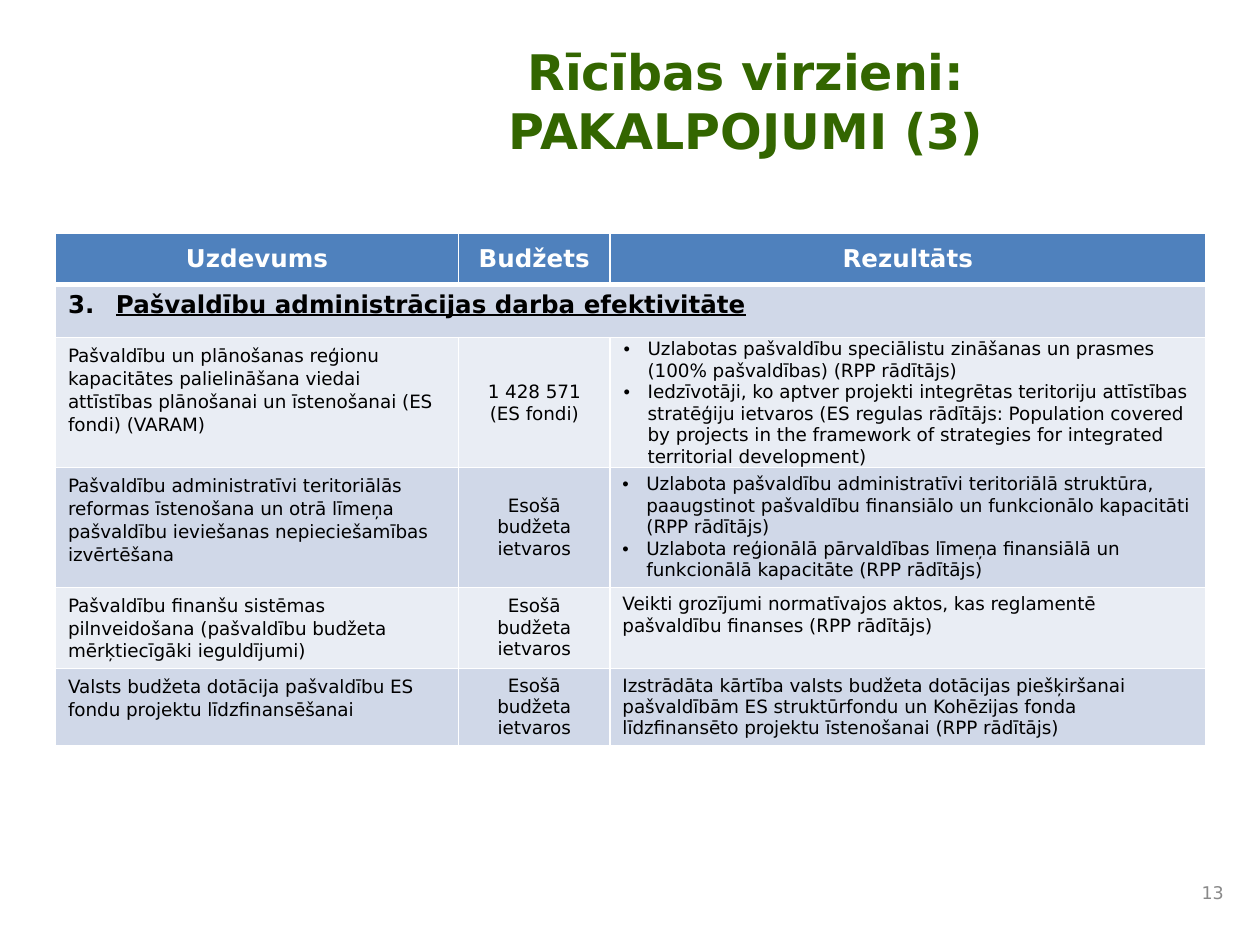
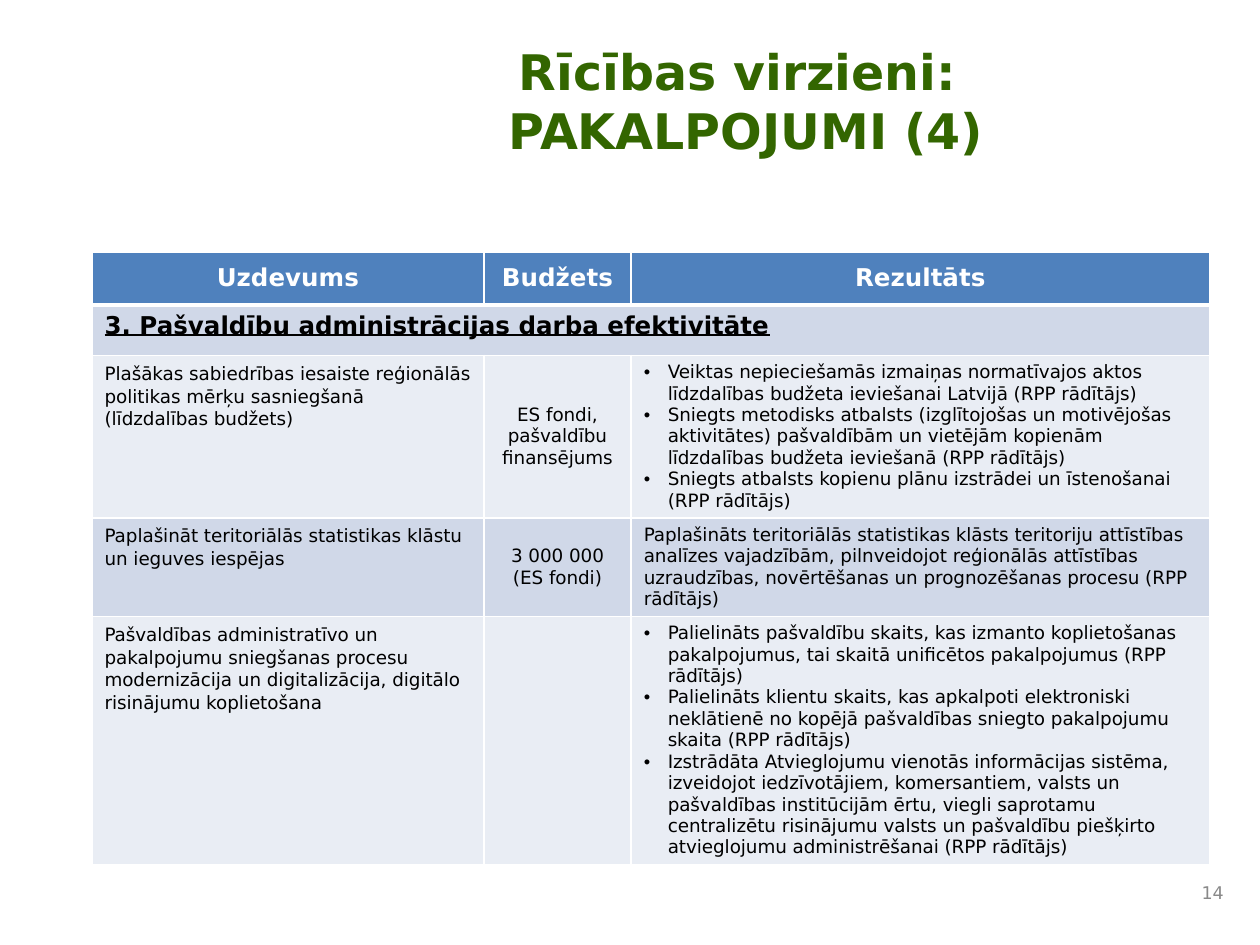
from dataclasses import dataclass
from enum import Enum

from lxml.etree import SubElement
from pptx import Presentation
from pptx.dml.color import RGBColor
from pptx.enum.text import MSO_ANCHOR, MSO_AUTO_SIZE, PP_ALIGN
from pptx.oxml.ns import qn
from pptx.util import Emu, Inches, Pt

FONT = "DejaVu Sans"
GREEN = RGBColor(0x33, 0x66, 0x00)
BLUE = RGBColor(0x4F, 0x81, 0xBD)
BAND_DARK = RGBColor(0xD0, 0xD8, 0xE8)
BAND_LIGHT = RGBColor(0xE9, 0xED, 0xF4)
WHITE = RGBColor(0xFF, 0xFF, 0xFF)
BLACK = RGBColor(0x00, 0x00, 0x00)
GREY = RGBColor(0x89, 0x89, 0x89)

GRID_UNIT = Inches(0.1)
TITLE_BOX = (24.1, 2, 70.2, 12)
NUMBER_BOX = (93.3, 69.2, 4.8, 3.3)
HEADINGS = ("Uzdevums", "Budžets", "Rezultāts")
SECTION = "Pašvaldību administrācijas darba efektivitāte"
OWN_BUDGET = ("Esošā budžeta ietvaros",)
HANG = 1.9


class Bullet(Enum):
    NONE = 0
    DOT = 1
    NUMBER = 2


@dataclass(frozen=True)
class TextStyle:
    size: float
    color: RGBColor
    bold: bool = False
    underline: bool = False
    align: PP_ALIGN = PP_ALIGN.LEFT
    spacing: float = 1.0


@dataclass(frozen=True)
class Task:
    name: str
    budget: tuple[str, ...]
    results: tuple[str, ...]
    height: float
    tight: bool = False


@dataclass(frozen=True)
class TaskSlide:
    number: int
    title: tuple[str, str]
    section: str
    numbered: bool
    left: float
    top: float
    columns: tuple[float, float, float]
    head_rows: tuple[float, float]
    tasks: tuple[Task, ...]


TITLE = TextStyle(28, GREEN, bold=True, align=PP_ALIGN.CENTER)
HEADING = TextStyle(14, WHITE, bold=True, align=PP_ALIGN.CENTER)
SECTION_TEXT = TextStyle(14, BLACK, bold=True, underline=True)
TASK_TEXT = TextStyle(10.5, BLACK, spacing=1.07)
BUDGET_TEXT = TextStyle(10.5, BLACK, align=PP_ALIGN.CENTER)
RESULT_TEXT = TextStyle(10.5, BLACK)
NUMBER_TEXT = TextStyle(10, GREY, align=PP_ALIGN.RIGHT)

SLIDES = (
    TaskSlide(
        13, ("Rīcības virzieni:", "PAKALPOJUMI (3)"), SECTION, True,
        4.4, 18.5, (32, 12, 47.3), (4.1, 4.2),
        (
            Task(
                "Pašvaldību un plānošanas reģionu kapacitātes palielināšana viedai "
                "attīstības plānošanai un īstenošanai (ES fondi) (VARAM)",
                ("1 428 571", "(ES fondi)"),
                (
                    "Uzlabotas pašvaldību speciālistu zināšanas un prasmes "
                    "(100% pašvaldības) (RPP rādītājs)",
                    "Iedzīvotāji, ko aptver projekti integrētas teritoriju attīstības "
                    "stratēģiju ietvaros (ES regulas rādītājs: Population covered by "
                    "projects in the framework of strategies for integrated "
                    "territorial development)",
                ),
                10.3, tight=True,
            ),
            Task(
                "Pašvaldību administratīvi teritoriālās reformas īstenošana un otrā "
                "līmeņa pašvaldību ieviešanas nepieciešamības izvērtēšana",
                OWN_BUDGET,
                (
                    "Uzlabota pašvaldību administratīvi teritoriālā struktūra, "
                    "paaugstinot pašvaldību finansiālo un funkcionālo kapacitāti "
                    "(RPP rādītājs)",
                    "Uzlabota reģionālā pārvaldības līmeņa finansiālā un "
                    "funkcionālā kapacitāte (RPP rādītājs)",
                ),
                9.5,
            ),
            Task(
                "Pašvaldību finanšu sistēmas pilnveidošana (pašvaldību budžeta "
                "mērķtiecīgāki ieguldījumi)",
                OWN_BUDGET,
                ("Veikti grozījumi normatīvajos aktos, kas reglamentē pašvaldību "
                 "finanses (RPP rādītājs)",),
                6.4,
            ),
            Task(
                "Valsts budžeta dotācija pašvaldību ES fondu projektu "
                "līdzfinansēšanai",
                OWN_BUDGET,
                ("Izstrādāta kārtība valsts budžeta dotācijas piešķiršanai "
                 "pašvaldībām ES struktūrfondu un Kohēzijas fonda līdzfinansēto "
                 "projektu īstenošanai (RPP rādītājs)",),
                6.1,
            ),
        ),
    ),
    TaskSlide(
        14, ("Rīcības virzieni: ", "PAKALPOJUMI (4)"), f"3. {SECTION}", False,
        7.3, 20, (31.1, 11.7, 45.9), (4.2, 4),
        (
            Task(
                "Plašākas sabiedrības iesaiste reģionālās politikas mērķu "
                "sasniegšanā (līdzdalības budžets)",
                ("ES fondi, pašvaldību finansējums",),
                (
                    "Veiktas nepieciešamās izmaiņas normatīvajos aktos līdzdalības "
                    "budžeta ieviešanai Latvijā (RPP rādītājs)",
                    "Sniegts metodisks atbalsts (izglītojošas un motivējošas "
                    "aktivitātes) pašvaldībām un vietējām kopienām līdzdalības "
                    "budžeta ieviešanā (RPP rādītājs)",
                    "Sniegts atbalsts kopienu plānu izstrādei un īstenošanai "
                    "(RPP rādītājs)",
                ),
                12.9,
            ),
            Task(
                "Paplašināt teritoriālās statistikas klāstu un ieguves iespējas",
                ("3 000 000", "(ES fondi)"),
                ("Paplašināts teritoriālās statistikas klāsts teritoriju attīstības "
                 "analīzes vajadzībām, pilnveidojot reģionālās attīstības "
                 "uzraudzības, novērtēšanas un prognozēšanas procesu "
                 "(RPP rādītājs)",),
                7.8,
            ),
            Task(
                "Pašvaldības administratīvo un pakalpojumu sniegšanas procesu "
                "modernizācija un digitalizācija, digitālo risinājumu koplietošana",
                (),
                (
                    "Palielināts pašvaldību skaits, kas izmanto koplietošanas "
                    "pakalpojumus, tai skaitā unificētos pakalpojumus (RPP rādītājs)",
                    "Palielināts klientu skaits, kas apkalpoti elektroniski "
                    "neklātienē no kopējā pašvaldības sniegto pakalpojumu skaita "
                    "(RPP rādītājs)",
                    "Izstrādāta Atvieglojumu vienotās informācijas sistēma, izveidojot "
                    "iedzīvotājiem, komersantiem, valsts un pašvaldības institūcijām "
                    "ērtu, viegli saprotamu centralizētu risinājumu valsts un "
                    "pašvaldību piešķirto atvieglojumu administrēšanai "
                    "(RPP rādītājs)",
                ),
                19.7,
            ),
        ),
    ),
)


def grid(units: float) -> Emu:
    return Emu(round(units * GRID_UNIT))


def add_run(p, text: str, style: TextStyle) -> None:
    r = p.add_run()
    r.text = text
    r.font.name = FONT
    r.font.size = Pt(style.size)
    r.font.bold = style.bold
    r.font.underline = style.underline
    r.font.color.rgb = style.color


def set_bullet(p, bullet: Bullet, indent: float, hang: float) -> None:
    pPr = p._p.get_or_add_pPr()
    pPr.set("marL", str(grid(indent)))
    pPr.set("indent", str(-grid(hang)))
    if bullet is Bullet.NUMBER:
        SubElement(pPr, qn("a:buAutoNum"), type="arabicPeriod", startAt="3")
    else:
        SubElement(pPr, qn("a:buFont"), typeface="Arial")
        SubElement(pPr, qn("a:buChar"), char="•")


def write(tf, lines: tuple[str, ...], style: TextStyle,
          bullet: Bullet = Bullet.NONE, indent: float = HANG, hang: float = HANG) -> None:
    for i, line in enumerate(lines):
        p = tf.add_paragraph() if i else tf.paragraphs[0]
        if bullet is not Bullet.NONE:
            set_bullet(p, bullet, indent, hang)
        p.alignment = style.align
        p.line_spacing = style.spacing
        add_run(p, line, style)


def paint_cell(cell, fill: RGBColor, top: float = 1, bottom: float = 1) -> None:
    tcPr = cell._tc.get_or_add_tcPr()
    for side, width in (("L", 1), ("R", 1), ("T", top), ("B", bottom)):
        ln = SubElement(tcPr, qn(f"a:ln{side}"), w=str(Pt(width)))
        SubElement(SubElement(ln, qn("a:solidFill")), qn("a:srgbClr"), val=str(WHITE))
    cell.fill.solid()
    cell.fill.fore_color.rgb = fill


def tighten(cell) -> None:
    cell.margin_left = cell.margin_right = cell.margin_top = Inches(0.01)
    cell.margin_bottom = 0


def add_task_row(cells, task: Task, fill: RGBColor) -> None:
    name, budget, result = cells
    for cell in cells:
        paint_cell(cell, fill)
    write(name.text_frame, (task.name,), TASK_TEXT)
    write(budget.text_frame, task.budget, BUDGET_TEXT)
    budget.vertical_anchor = MSO_ANCHOR.MIDDLE
    bullet = Bullet.DOT if len(task.results) > 1 else Bullet.NONE
    indent = HANG + 1 if task.tight else HANG
    write(result.text_frame, task.results, RESULT_TEXT, bullet, indent)
    if task.tight:
        result.vertical_anchor = MSO_ANCHOR.MIDDLE
        tighten(budget)
        tighten(result)


def add_task_table(s, data: TaskSlide) -> None:
    heights = (*data.head_rows, *(task.height for task in data.tasks))
    frame = s.shapes.add_table(
        len(heights), len(HEADINGS), grid(data.left), grid(data.top),
        grid(sum(data.columns)), grid(sum(heights)))
    table = frame.table
    table.first_row = table.horz_banding = False
    for column, width in zip(table.columns, data.columns):
        column.width = grid(width)
    for row, height in zip(table.rows, heights):
        row.height = grid(height)
    for i, heading in enumerate(HEADINGS):
        cell = table.cell(0, i)
        paint_cell(cell, BLUE, bottom=3)
        cell.vertical_anchor = MSO_ANCHOR.MIDDLE
        write(cell.text_frame, (heading,), HEADING)
        paint_cell(table.cell(1, i), BAND_DARK, top=3)
    section = table.cell(1, 0)
    section.merge(table.cell(1, len(HEADINGS) - 1))
    bullet = Bullet.NUMBER if data.numbered else Bullet.NONE
    write(section.text_frame, (data.section,), SECTION_TEXT, bullet, 3.8, 3.8)
    for i, task in enumerate(data.tasks):
        cells = [table.cell(i + 2, j) for j in range(len(HEADINGS))]
        add_task_row(cells, task, BAND_DARK if i % 2 else BAND_LIGHT)


def add_title(s, lines: tuple[str, str]) -> None:
    sp = s.shapes.title
    sp.left, sp.top, sp.width, sp.height = map(grid, TITLE_BOX)
    tf = sp.text_frame
    tf.auto_size = MSO_AUTO_SIZE.NONE
    tf.vertical_anchor = MSO_ANCHOR.MIDDLE
    p = tf.paragraphs[0]
    p.alignment = TITLE.align
    add_run(p, lines[0], TITLE)
    p.add_line_break()
    add_run(p, lines[1], TITLE)


def add_page_number(s, number: int) -> None:
    tf = s.shapes.add_textbox(*map(grid, NUMBER_BOX)).text_frame
    tf.word_wrap = True
    tf.vertical_anchor = MSO_ANCHOR.MIDDLE
    write(tf, (str(number),), NUMBER_TEXT)


def main() -> None:
    prs = Presentation()
    prs.slide_width, prs.slide_height = grid(100), grid(75)
    for data in SLIDES:
        s = prs.slides.add_slide(prs.slide_layouts[5])
        add_task_table(s, data)
        add_page_number(s, data.number)
        add_title(s, data.title)
    prs.save("out.pptx")


if __name__ == "__main__":
    main()
